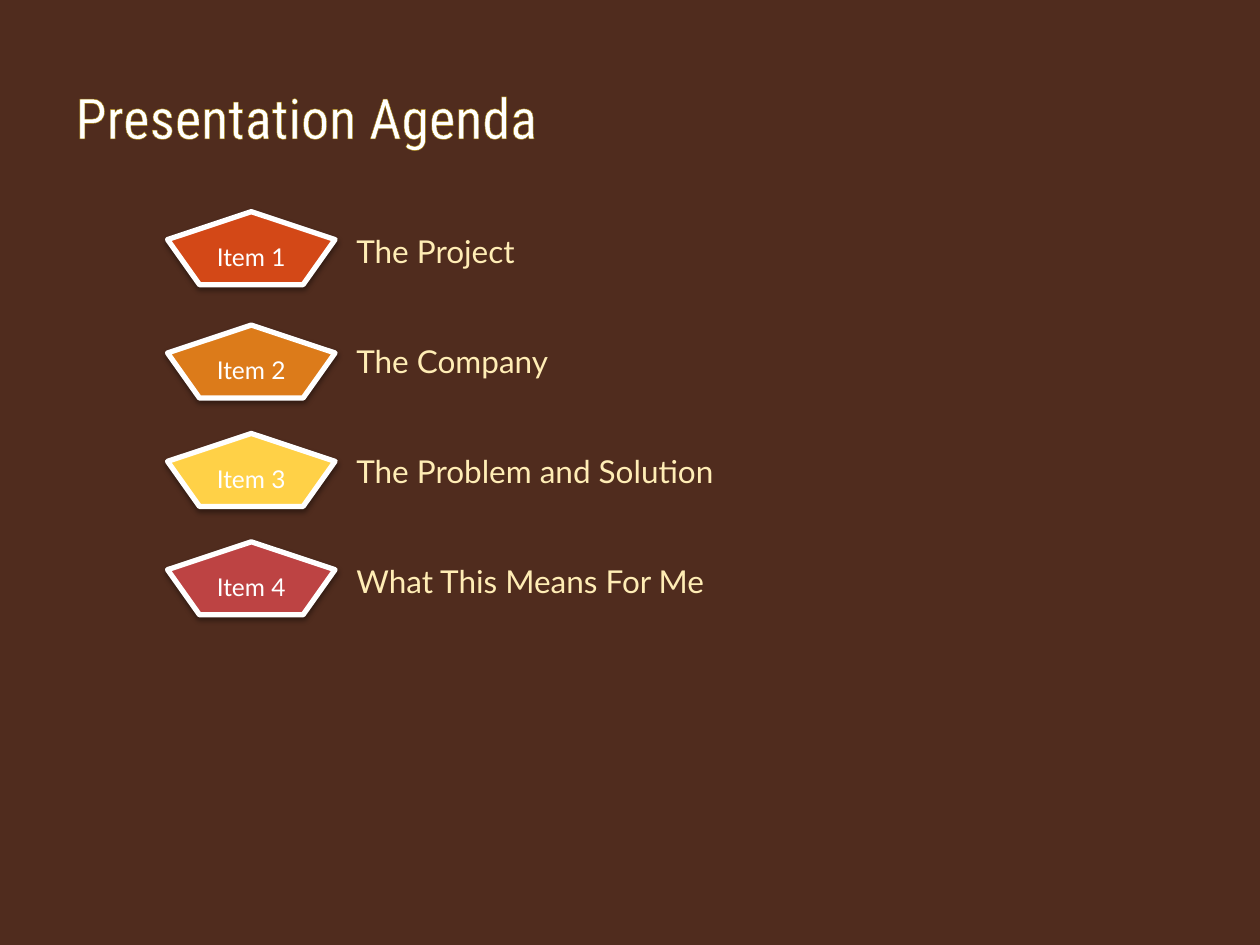
from lxml.etree import SubElement
from pptx import Presentation
from pptx.dml.color import RGBColor
from pptx.enum.shapes import MSO_SHAPE
from pptx.enum.text import MSO_ANCHOR, PP_ALIGN
from pptx.oxml import parse_xml
from pptx.oxml.ns import nsdecls, qn
from pptx.util import Inches, Pt

AGENDA = [
    ("Item 1", "The Project", "D34817", 1.68),
    ("Item 2", "The Company", "DC7B1A", 2.58),
    ("Item 3", "The Problem and Solution", "FFD147", 3.44),
    ("Item 4", "What This Means For Me", "BD4343", 4.3),
]
BADGE_LEFT, BADGE_WIDTH, BADGE_HEIGHT = 1.33, 1.33, 0.58
TOPIC_LEFT, TOPIC_TOP, TOPIC_PITCH = 2.67, 1.79, 0.875
TOPIC_WIDTH, TOPIC_HEIGHT = 6.92, 0.92


def color(value):
    """Return the colour for a hex string."""
    return RGBColor.from_string(value)


def write(shape, text, size, font_name, hex_color, alignment, anchor):
    """Set one formatted paragraph in a shape and return its run."""
    frame = shape.text_frame
    frame.text = text
    frame.word_wrap = True
    frame.vertical_anchor = anchor
    paragraph = frame.paragraphs[0]
    paragraph.alignment = alignment
    run = paragraph.runs[0]
    run.font.size = Pt(size)
    run.font.name = font_name
    run.font.color.rgb = color(hex_color)
    return run


def add_title(slide, text):
    """Place the title and give its letters a thin outline."""
    title = slide.shapes.title
    title.left, title.top = Inches(0.5), Inches(0.3)
    title.width, title.height = Inches(9), Inches(1.25)
    run = write(title, text, 32, "Roboto Condensed", "FFFFFF", PP_ALIGN.LEFT, MSO_ANCHOR.MIDDLE)
    outline = parse_xml(
        f'<a:ln {nsdecls("a")} w="9525"><a:solidFill>'
        '<a:srgbClr val="A37A00"/></a:solidFill></a:ln>'
    )
    run.font._element.insert(0, outline)


def add_soft_shadow(shape):
    """Give a shape a soft shadow that falls straight down."""
    shape.shadow.inherit = False
    effects = shape._element.spPr.find(qn("a:effectLst"))
    shadow = SubElement(effects, qn("a:outerShdw"), blurRad=str(Pt(3.1)), dist=str(Pt(1.6)),
                        dir="5400000", rotWithShape="0")
    shade = SubElement(shadow, qn("a:srgbClr"), val="000000")
    SubElement(shade, qn("a:alpha"), val="38000")


def add_badge(slide, text, fill, top):
    """Add a numbered pentagon."""
    badge = slide.shapes.add_shape(
        MSO_SHAPE.REGULAR_PENTAGON, Inches(BADGE_LEFT), Inches(top),
        Inches(BADGE_WIDTH), Inches(BADGE_HEIGHT))
    badge.fill.solid()
    badge.fill.fore_color.rgb = color(fill)
    badge.line.color.rgb = color("FFFFFF")
    badge.line.width = Pt(3)
    add_soft_shadow(badge)
    write(badge, text, 14, "Lato", "FFFFFF", PP_ALIGN.CENTER, MSO_ANCHOR.MIDDLE)


def add_topic(slide, text, row):
    """Add the agenda topic of a row."""
    topic = slide.shapes.add_textbox(
        Inches(TOPIC_LEFT), Inches(TOPIC_TOP + row * TOPIC_PITCH),
        Inches(TOPIC_WIDTH), Inches(TOPIC_HEIGHT))
    write(topic, text, 18, "Lato", "FFEDB5", PP_ALIGN.LEFT, MSO_ANCHOR.TOP)
    properties = topic.text_frame.paragraphs[0]._p.get_or_add_pPr()
    properties.set("marL", str(Inches(0.06)))
    properties.set("indent", "0")


def main():
    """Build and save the agenda slide."""
    presentation = Presentation()
    presentation.slide_width, presentation.slide_height = Inches(10), Inches(7.5)
    slide = presentation.slides.add_slide(presentation.slide_layouts.get_by_name("Title Only"))
    slide.background.fill.solid()
    slide.background.fill.fore_color.rgb = color("502C1E")
    add_title(slide, "Presentation Agenda")
    for row, (label, topic, fill, top) in enumerate(AGENDA):
        add_topic(slide, topic, row)
        add_badge(slide, label, fill, top)
    presentation.save("out.pptx")


if __name__ == "__main__":
    main()
